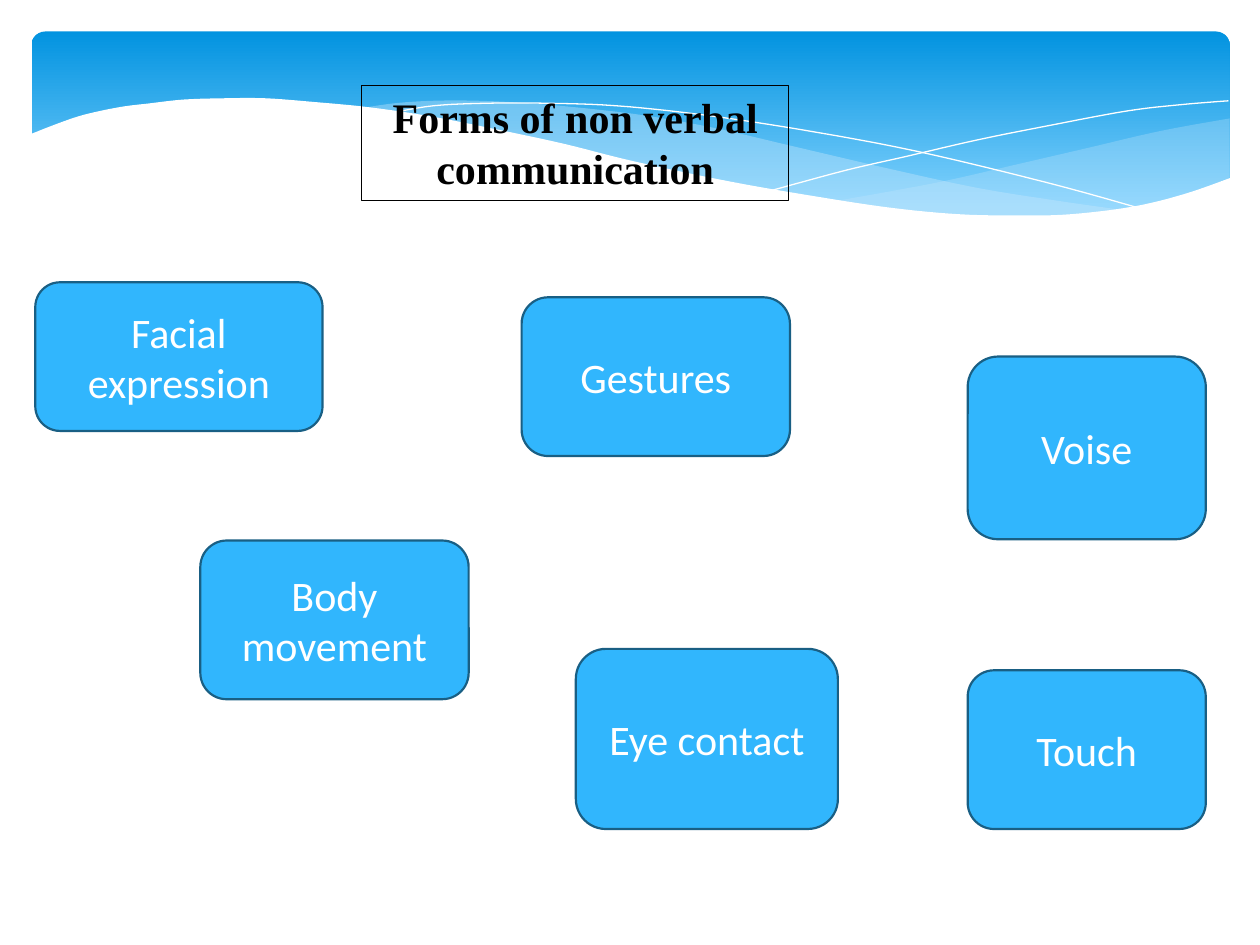
from dataclasses import dataclass

from pptx import Presentation
from pptx.dml.color import RGBColor
from pptx.enum.shapes import MSO_SHAPE as Shape
from pptx.enum.text import MSO_ANCHOR as Anchor, MSO_AUTO_SIZE as AutoSize, PP_ALIGN as Align
from pptx.oxml.ns import qn
from pptx.util import Inches, Pt
from lxml.etree import SubElement


@dataclass(frozen=True)
class Theme:
    sky: str = "0293E0"
    pale: str = "83D3FE"
    mist: str = "C6E7FC"
    white: str = "FFFFFF"
    black: str = "000000"
    card: str = "31B6FD"
    edge: str = "195F84"
    title_font: str = "Times New Roman"
    body_font: str = "Calibri"
    size: int = 24


def smooth(points, steps=6):
    if len(points) < 3:
        return points
    padded = [points[0], *points, points[-1]]
    curve = []
    for a, b, c, d in zip(padded, padded[1:], padded[2:], padded[3:]):
        for t in (i / steps for i in range(steps)):
            curve.append(tuple(
                (2 * q + (r - p) * t + (2 * p - 5 * q + 4 * r - s) * t**2
                 + (3 * q - p - 3 * r + s) * t**3) / 2
                for p, q, r, s in zip(a, b, c, d)))
    return curve + [points[-1]]


class Deck:
    """Draws styled elements on one slide, on a grid of 100 columns by 75 rows."""

    COLS, ROWS = 100, 75

    def __init__(self, theme):
        self.theme = theme
        self.prs = Presentation()
        self.prs.slide_width, self.prs.slide_height = Inches(10), Inches(7.5)
        self.slide = self.prs.slides.add_slide(self.prs.slide_layouts[6])

    def place(self, col, row):
        return (round(col * self.prs.slide_width / self.COLS),
                round(row * self.prs.slide_height / self.ROWS))

    def box(self, col, row, cols, rows):
        return *self.place(col, row), *self.place(cols, rows)

    def paint(self, sp, fill=None, line=None, width=0, alpha=None):
        sp.shadow.inherit = False
        for part, color in ((sp.fill, fill), (sp.line.fill, line)):
            if color:
                part.solid()
                part.fore_color.rgb = RGBColor.from_string(color)
            else:
                part.background()
        if line:
            sp.line.width = Pt(width)
        if alpha:
            color = sp.element.spPr.find(qn("a:solidFill"))[0]
            SubElement(color, qn("a:alpha"), val=str(alpha * 1000))

    def label(self, sp, text, font, color, bold=False):
        tf = sp.text_frame
        tf.word_wrap = True
        p = tf.paragraphs[0]
        p.text, p.alignment = text, Align.CENTER
        p.font.name, p.font.size, p.font.bold = font, Pt(self.theme.size), bold
        p.font.color.rgb = RGBColor.from_string(color)
        return tf

    def banner(self, *box):
        sp = self.slide.shapes.add_shape(Shape.ROUNDED_RECTANGLE, *self.box(*box))
        self.paint(sp)
        sp.adjustments[0] = 0.07
        sp.fill.gradient()
        sp.fill.gradient_angle = 270
        stops = zip(sp.fill.gradient_stops, (0, 0.9), (self.theme.sky, self.theme.pale))
        for stop, position, color in stops:
            stop.position = position
            stop.color.rgb = RGBColor.from_string(color)

    def wave(self, *curves, closed=True, **style):
        points = [self.place(*xy) for curve in curves for xy in smooth(curve)]
        builder = self.slide.shapes.build_freeform(*points[0])
        builder.add_line_segments(points[1:], close=closed)
        self.paint(builder.convert_to_shape(), **style)

    def title(self, text, *box):
        sp = self.slide.shapes.add_textbox(*self.box(*box))
        self.paint(sp, line=self.theme.black, width=0.75)
        tf = self.label(sp, text, self.theme.title_font, self.theme.black, bold=True)
        tf.auto_size = AutoSize.SHAPE_TO_FIT_TEXT

    def card(self, text, *box):
        sp = self.slide.shapes.add_shape(Shape.FLOWCHART_ALTERNATE_PROCESS, *self.box(*box))
        self.paint(sp, self.theme.card, self.theme.edge, 1.25)
        tf = self.label(sp, text, self.theme.body_font, self.theme.white)
        tf.vertical_anchor = Anchor.MIDDLE


def main():
    theme = Theme()
    deck = Deck(theme)

    deck.banner(2.5, 2.5, 95.1, 15.6)
    deck.wave(
        [(97.6, 9.4), (92.1, 10.4), (86.1, 11.8), (80.5, 13.1), (75.3, 14.3), (70.6, 15.2), (66.1, 16)],
        [(66.1, 16), (71.9, 16.7), (76.9, 17.1), (81.4, 17.2), (86.3, 17),
         (90.5, 16.3), (94.2, 15.4), (97.6, 14.1)],
        fill=theme.mist, alpha=29)
    deck.wave(
        [(89.3, 16.7), (83.7, 15.9), (77.5, 14.9), (70.6, 13.4), (62.9, 11.6), (56.9, 10.2),
         (51.4, 9.2), (46.5, 8.6), (42, 8.2), (38, 8), (34.4, 8), (31.3, 8.2), (28.6, 8.6)],
        [(28.6, 8.6), (34.2, 9.4), (40.4, 10.6), (46, 11.9), (53, 13.5), (60.1, 15),
         (66.5, 16.1), (72.2, 16.8), (77.3, 17.2), (81.8, 17.3), (85.7, 17.1), (89.3, 16.7)],
        fill=theme.mist, alpha=40)
    for strand in (
        [(30.9, 9), (34.4, 8.4), (38.7, 8.2), (43.3, 8.2), (48.9, 8.4), (55.6, 9.1),
         (63.6, 10.3), (72.7, 12), (83.1, 14.5), (90.7, 16.6)],
        [(61.3, 15.1), (67.2, 13.5), (72, 12.4), (77.6, 11.1), (83.6, 9.9), (89.5, 8.8),
         (93.8, 8.3), (97.5, 8)],
    ):
        deck.wave(strand, closed=False, line=theme.white)
    deck.wave(
        [(97.7, 14.1), (94, 15.4), (89.9, 16.4), (85, 17), (80.9, 17.1), (76.1, 17),
         (70.8, 16.5), (64.8, 15.6), (57.9, 14.4), (50.3, 12.8), (44.7, 11.4), (39.1, 10.2),
         (34, 9.2), (29.2, 8.5), (25, 8.1), (21.1, 7.8), (17.7, 7.8), (14.6, 7.9),
         (11.9, 8.2), (9.5, 8.5), (6.7, 9.1), (4.6, 9.8), (2.3, 10.7)],
        [(2.3, 22.4), (97.7, 22.4)],
        fill=theme.white)

    deck.title("Forms of non verbal communication", 28.7, 6.8, 33.9, 9.1)
    for text, *box in (
        ("Facial expression", 2.8, 22.4, 22.8, 11.8),
        ("Body movement", 15.9, 42.9, 21.3, 12.6),
        ("Gestures", 41.4, 23.6, 21.3, 12.6),
        ("Eye contact", 45.7, 51.5, 20.8, 14.3),
        ("Voise", 76.8, 28.3, 18.9, 14.5),
        ("Touch", 76.8, 53.2, 18.9, 12.6),
    ):
        deck.card(text, *box)

    deck.prs.save("out.pptx")


if __name__ == "__main__":
    main()
